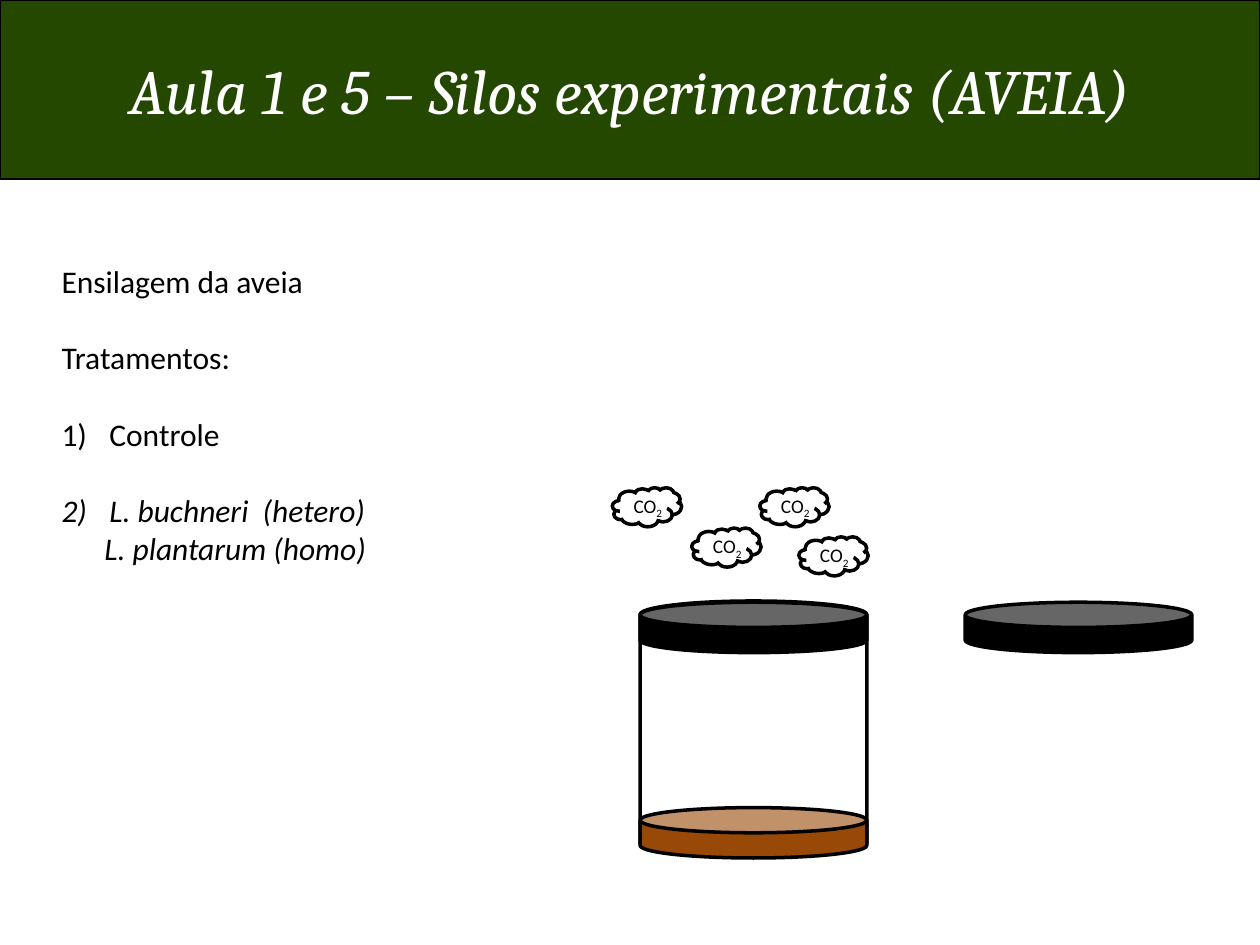
import pptx
import pptx.util
import pptx.dml.color
import pptx.enum.shapes
import pptx.enum.text
import pptx.oxml.ns
import lxml.etree

Inches = pptx.util.Inches
Pt = pptx.util.Pt
SHAPES = pptx.enum.shapes.MSO_SHAPE
ANCHOR = pptx.enum.text.MSO_ANCHOR
ALIGN = pptx.enum.text.PP_ALIGN
AUTO_SIZE = pptx.enum.text.MSO_AUTO_SIZE

WIDTH, HEIGHT = 10, 7.5
COLOURS = {"band": "244800", "ink": "000000", "paper": "FFFFFF", "silage": "984807"}

TITLE = "Aula 1 e 5 – Silos experimentais (AVEIA)"
TREATMENTS = [
    {"text": "Ensilagem da aveia"},
    {"text": "Tratamentos:", "gap": 22},
    {"text": "Controle", "gap": 22, "left": 0.38, "numbered": True},
    {"text": "L. buchneri  (hetero)", "gap": 22, "left": 0.38, "numbered": True, "italic": True},
    {"text": "L. plantarum (homo)", "left": 0.34, "italic": True},
]

SILO_LEFT, LID_LEFT = 5.08, 7.66
CAN_WIDTH, LID_HEIGHT = 1.8, 0.4
SILO_TOP, SILO_HEIGHT, LID_TOP = 4.77, 2.03, 4.78
SILAGE_TOP = SILO_TOP + SILO_HEIGHT - LID_HEIGHT + 0.01
CANS = [
    (SILO_LEFT, SILO_TOP, SILO_HEIGHT, 0.12, None),
    (SILO_LEFT, LID_TOP, LID_HEIGHT, 0.5, "ink"),
    (SILO_LEFT, SILAGE_TOP, LID_HEIGHT, 0.5, "silage"),
    (LID_LEFT, LID_TOP, LID_HEIGHT, 0.5, "ink"),
]
CLOUDS = [(6.34, 4.26), (6.03, 3.87), (5.49, 4.19), (4.86, 3.87)]


def colour(name):
    return pptx.dml.color.RGBColor.from_string(COLOURS[name])


def apply(target, values):
    for name, value in values.items():
        setattr(target, name, value)


def place(*box):
    return [Inches(round(length, 2)) for length in box]


def paint(shape, fill, line_width):
    if fill:
        shape.fill.solid()
        shape.fill.fore_color.rgb = colour(fill)
    else:
        shape.fill.background()
    shape.line.color.rgb = colour("ink")
    shape.line.width = Pt(line_width)


def add_run(paragraph, text, size, ink="ink", name="Calibri", italic=False):
    run = paragraph.add_run()
    run.text = text
    apply(run.font, {"size": Pt(size), "name": name, "italic": italic})
    run.font.color.rgb = colour(ink)
    return run


def add_shape(shapes, kind, box, fill=None):
    shape = shapes.add_shape(kind, *place(*box))
    shape.shadow.inherit = False
    paint(shape, fill, 2)
    return shape


def add_title(slide):
    title = slide.shapes.title
    left, top, width, height = place(0, 0, WIDTH, 1.42)
    apply(title, {"left": left, "top": top, "width": width, "height": height})
    paint(title, "band", 0.75)
    apply(title.text_frame, {"vertical_anchor": ANCHOR.MIDDLE, "auto_size": AUTO_SIZE.NONE})
    paragraph = title.text_frame.paragraphs[0]
    paragraph.alignment = ALIGN.CENTER
    add_run(paragraph, TITLE, 36, "paper", "Cambria", True)


def add_treatments(slide):
    frame = slide.shapes.add_textbox(*place(0.39, 2.03, 4.06, 2.73)).text_frame
    frame.word_wrap = True
    for index, item in enumerate(TREATMENTS):
        paragraph = frame.add_paragraph() if index else frame.paragraphs[0]
        paragraph.space_before = Pt(item.get("gap", 0))
        properties = paragraph._p.get_or_add_pPr()
        left = Inches(item.get("left", 0))
        properties.set("marL", str(left))
        if item.get("numbered"):
            properties.set("indent", str(-left))
            bullet = lxml.etree.SubElement(properties, pptx.oxml.ns.qn("a:buAutoNum"))
            bullet.set("type", "arabicParenR")
        add_run(paragraph, item["text"], 18, italic=item.get("italic", False))


def add_cloud(slide, left, top):
    group = slide.shapes.add_group_shape()
    add_shape(group.shapes, SHAPES.CLOUD, (left, top, 0.55, 0.31))
    label = group.shapes.add_textbox(*place(left + 0.07, top, 0.7, 0.29))
    label.text_frame.word_wrap = True
    paragraph = label.text_frame.paragraphs[0]
    add_run(paragraph, "CO", 11)
    subscript = add_run(paragraph, "2", 11)
    subscript._r.get_or_add_rPr().set("baseline", "-25000")


def main():
    presentation = pptx.Presentation()
    apply(presentation, {"slide_width": Inches(WIDTH), "slide_height": Inches(HEIGHT)})
    slide = presentation.slides.add_slide(presentation.slide_layouts[5])
    add_title(slide)
    add_treatments(slide)
    for left, top, height, curve, fill in CANS:
        can = add_shape(slide.shapes, SHAPES.CAN, (left, top, CAN_WIDTH, height), fill)
        can.adjustments[0] = curve
    for left, top in CLOUDS:
        add_cloud(slide, left, top)
    presentation.save("out.pptx")


if __name__ == "__main__":
    main()
